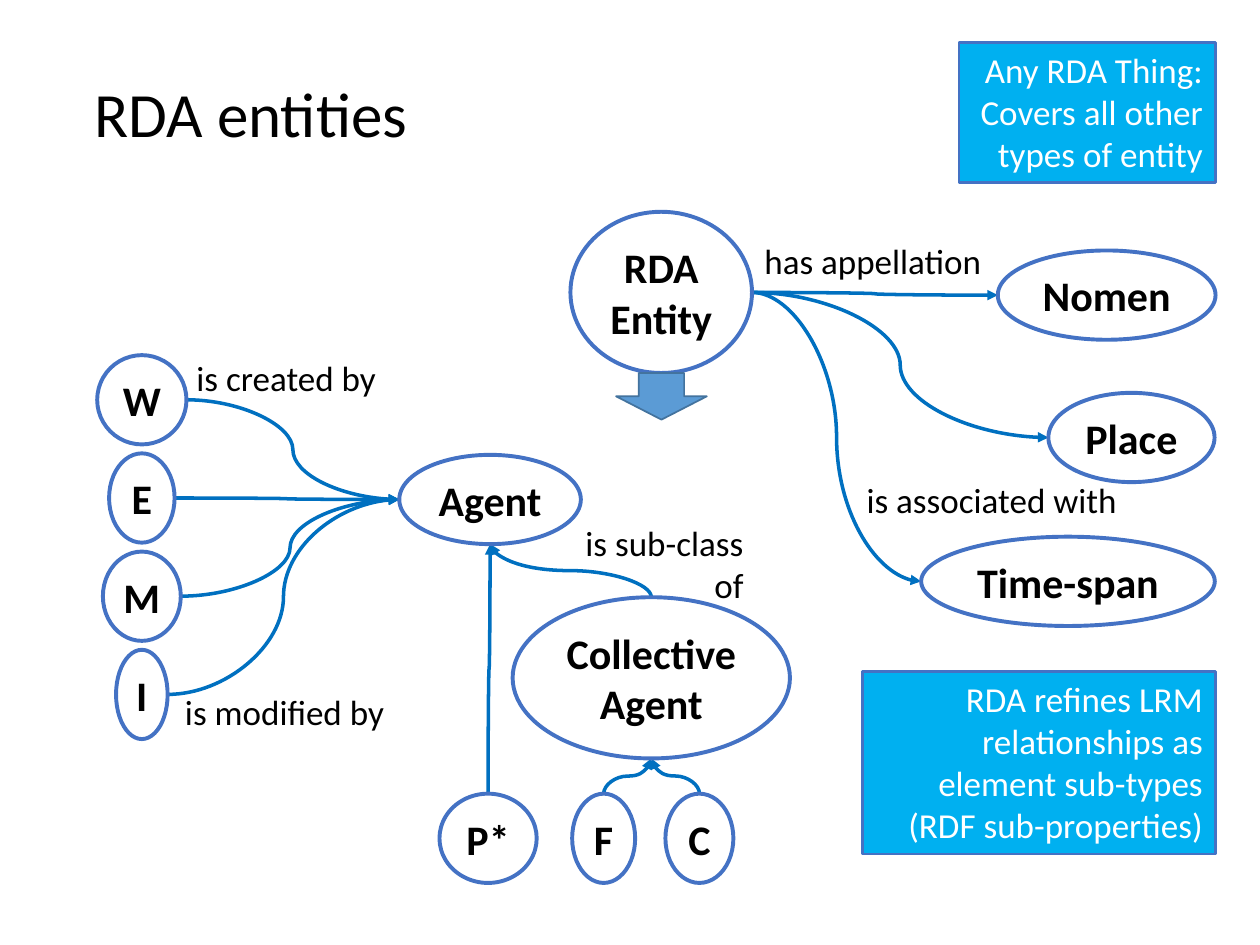
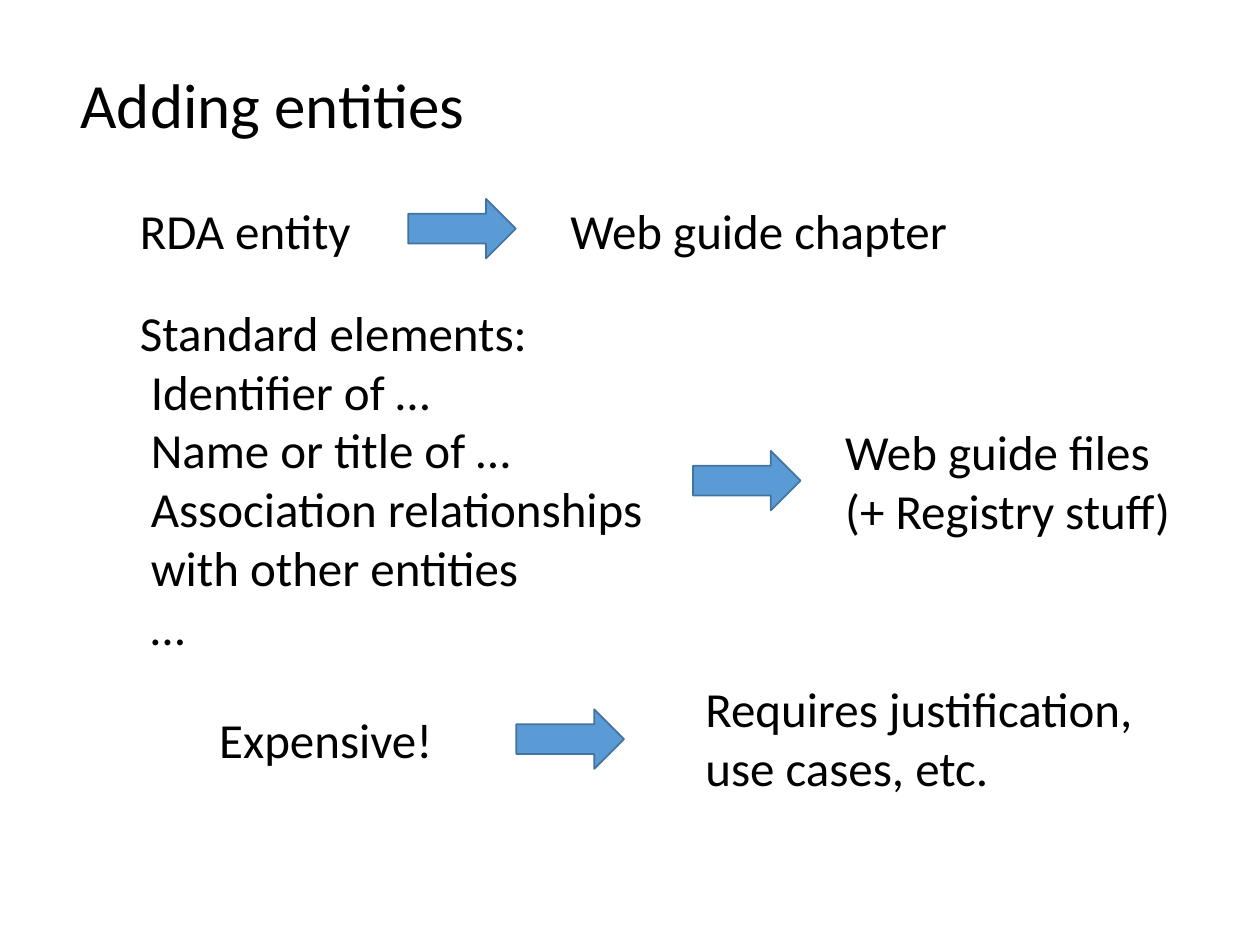
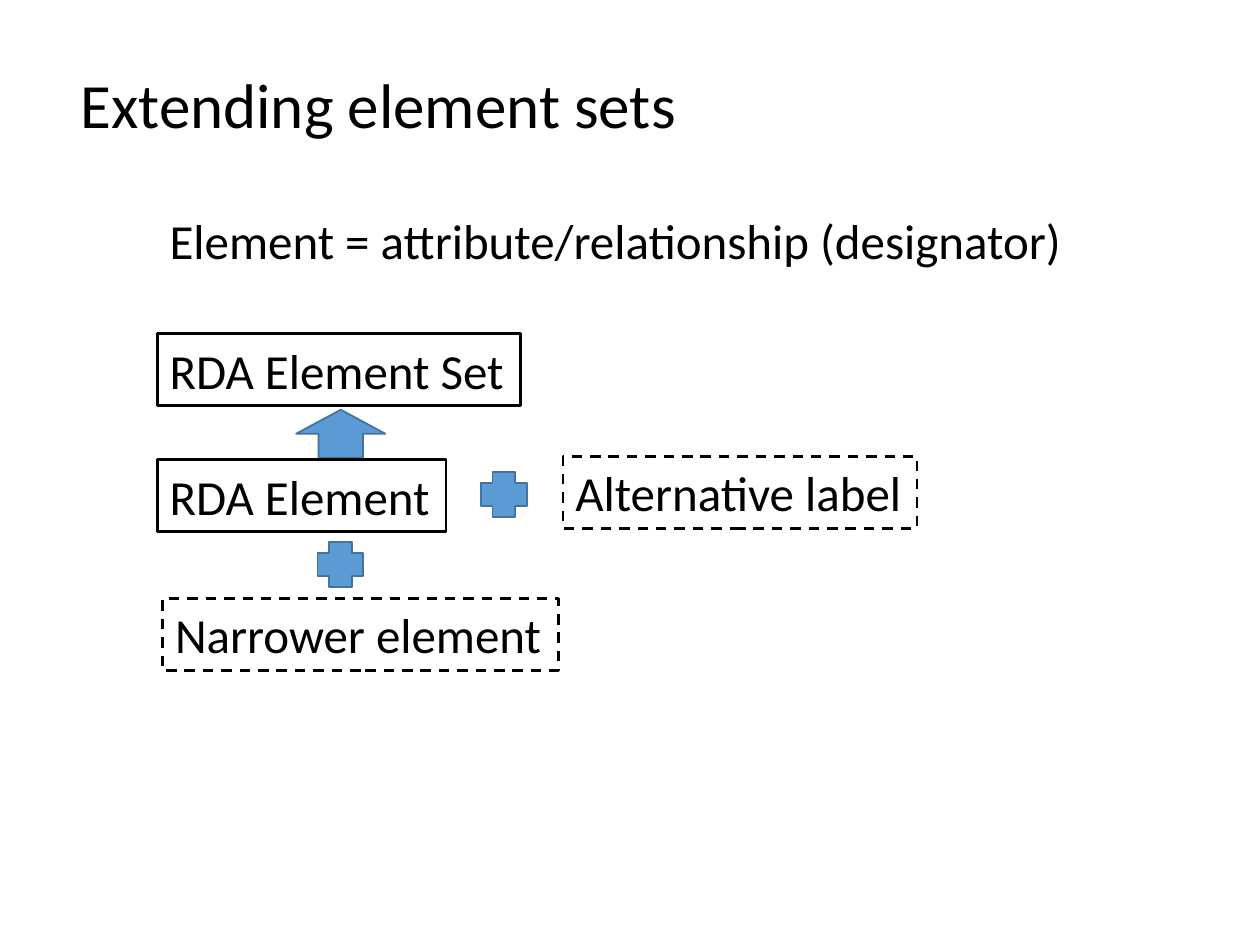
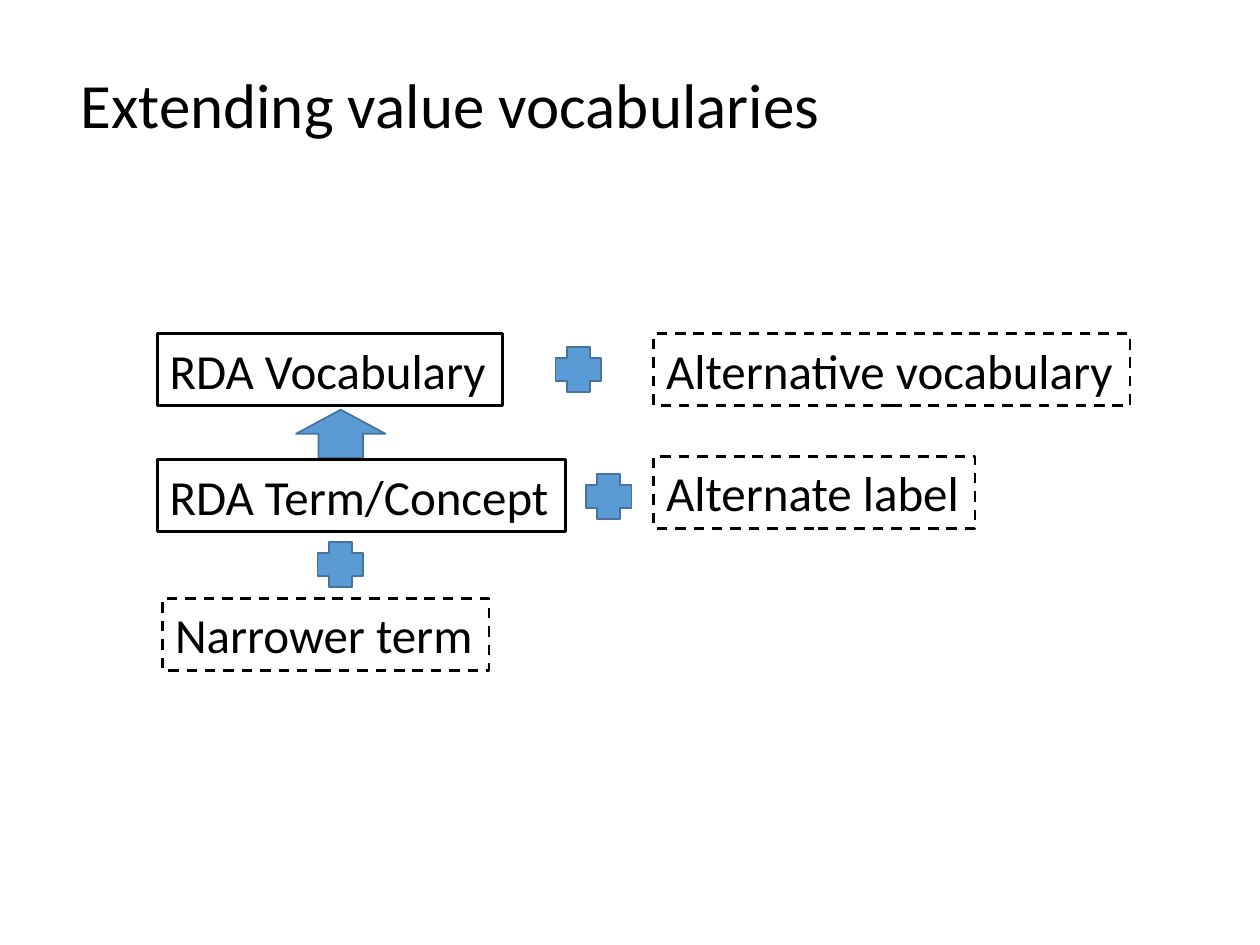
"""Build four slides on RDA entities, elements and vocabularies."""
from dataclasses import dataclass

from lxml import etree
from pptx import Presentation
from pptx.dml.color import RGBColor
from pptx.enum.dml import MSO_LINE
from pptx.enum.shapes import MSO_CONNECTOR, MSO_SHAPE
from pptx.enum.text import MSO_ANCHOR, MSO_AUTO_SIZE, PP_ALIGN
from pptx.oxml.ns import qn
from pptx.util import Cm, Pt

LEFT, CENTER, RIGHT = PP_ALIGN.LEFT, PP_ALIGN.CENTER, PP_ALIGN.RIGHT
TOP, MIDDLE = MSO_ANCHOR.TOP, MSO_ANCHOR.MIDDLE
GROW, FIXED = MSO_AUTO_SIZE.SHAPE_TO_FIT_TEXT, MSO_AUTO_SIZE.NONE
RECTANGLE, OVAL, PLUS = MSO_SHAPE.RECTANGLE, MSO_SHAPE.OVAL, MSO_SHAPE.CROSS
UP_ARROW, DOWN_ARROW = MSO_SHAPE.UP_ARROW, MSO_SHAPE.DOWN_ARROW
RIGHT_ARROW = MSO_SHAPE.RIGHT_ARROW
CURVE, DASH = MSO_CONNECTOR.CURVE, MSO_LINE.DASH
TITLE_ONLY = 5
OVAL_SITES = {"top": 0, "left": 2, "bottom": 4, "right": 6}


@dataclass(frozen=True)
class Theme:
    """Colours, font and sizes shared by the slides."""

    font: str = "Calibri"
    black: RGBColor = RGBColor(0, 0, 0)
    white: RGBColor = RGBColor(255, 255, 255)
    note_fill: RGBColor = RGBColor(0x00, 0xB0, 0xF0)
    outline: RGBColor = RGBColor(0x44, 0x72, 0xC4)
    relation: RGBColor = RGBColor(0x00, 0x70, 0xC0)
    symbol_fill: RGBColor = RGBColor(0x5B, 0x9B, 0xD5)
    symbol_line: RGBColor = RGBColor(0x43, 0x73, 0x9E)
    title_size: int = 36
    body_size: int = 28
    node_size: int = 24
    label_size: int = 20


THEME = Theme()

NODES = [
    ("RDA\nEntity", 13.33, 4.27, 3.66, 3.25),
    ("Nomen", 22.31, 5.05, 4.39, 1.8),
    ("Place", 22.81, 7.92, 3.35, 1.8),
    ("Time-span", 21.53, 10.82, 5.92, 1.8),
    ("Agent", 9.88, 9.17, 3.66, 1.8),
    ("Collective\nAgent", 13.13, 12.04, 5.59, 3.25),
    ("P*", 9.84, 16, 1.96, 1.8),
    ("F", 12.17, 16, 1.27, 1.8),
    ("C", 14.1, 16, 1.37, 1.8),
]
RESOURCE_WIDTHS = {"W": 1.8, "E": 1.32, "M": 1.57, "I": 1.04}
SIDEWAYS_RELATIONS = [("RDA\nEntity", name) for name in ("Nomen", "Place", "Time-span")]
SIDEWAYS_RELATIONS += [(name, "Agent") for name in RESOURCE_WIDTHS]
UPWARD_RELATIONS = [
    ("F", "Collective\nAgent"),
    ("C", "Collective\nAgent"),
    ("P*", "Agent"),
    ("Collective\nAgent", "Agent"),
]


def write_text(shape, text, size=THEME.body_size, color=THEME.black, bold=False,
               align=LEFT, anchor=TOP, wrap=False, auto_size=GROW, indent=0):
    """Fill a shape with one paragraph per line, indenting all but the first."""
    frame = shape.text_frame
    frame.text = text
    frame.word_wrap = wrap
    frame.auto_size = auto_size
    frame.vertical_anchor = anchor
    for number, paragraph in enumerate(frame.paragraphs):
        paragraph.alignment = align
        if indent and number:
            paragraph._p.get_or_add_pPr().set("marL", str(Cm(indent)))
        font = paragraph.font
        font.name, font.size, font.bold = THEME.font, Pt(size), bold
        font.color.rgb = color


def add_titled_slide(presentation, title, left=1.37, top=1.19, width=14):
    """Add a title-only slide and place its title."""
    slide = presentation.slides.add_slide(presentation.slide_layouts[TITLE_ONLY])
    placeholder = slide.shapes.title
    placeholder.left, placeholder.top = Cm(left), Cm(top)
    placeholder.width, placeholder.height = Cm(width), Cm(1.8)
    write_text(placeholder, title, size=THEME.title_size, wrap=True)
    return slide


def add_text(slide, text, left, top, width, height, **text_format):
    """Add a plain text box."""
    box = slide.shapes.add_textbox(Cm(left), Cm(top), Cm(width), Cm(height))
    write_text(box, text, **text_format)


def add_figure(slide, kind, left, top, width, height, fill=None,
               line=THEME.black, weight=1.5, dash=None):
    """Add a preset shape with an outline and an optional fill."""
    shape = slide.shapes.add_shape(kind, Cm(left), Cm(top), Cm(width), Cm(height))
    shape.shadow.inherit = False
    if fill is None:
        shape.fill.background()
    else:
        shape.fill.solid()
        shape.fill.fore_color.rgb = fill
    shape.line.color.rgb = line
    shape.line.width = Pt(weight)
    if dash is not None:
        shape.line.dash_style = dash
    return shape


def add_symbol(slide, kind, left, top, width, height):
    """Add a block arrow or plus sign."""
    add_figure(slide, kind, left, top, width, height, fill=THEME.symbol_fill,
               line=THEME.symbol_line, weight=1)


def add_plus(slide, left, top):
    """Add a plus sign."""
    add_symbol(slide, PLUS, left, top, 0.92, 0.92)


def add_right_arrow(slide, left, top):
    """Add a block arrow that points right."""
    add_symbol(slide, RIGHT_ARROW, left, top, 2.17, 1.2)


def add_note(slide, text, left, top, width, height):
    """Add a filled note with right-aligned text."""
    note = add_figure(slide, RECTANGLE, left, top, width, height,
                      fill=THEME.note_fill, line=THEME.outline)
    write_text(note, text, size=THEME.label_size, color=THEME.white,
               align=RIGHT, wrap=True)


def add_box(slide, text, left, top, width, dash=None):
    """Add an outlined box for an element or term."""
    box = add_figure(slide, RECTANGLE, left, top, width, 1.45, dash=dash)
    write_text(box, text)


def add_node(slide, text, center, top, width, height):
    """Add an entity oval centred on a horizontal position."""
    node = add_figure(slide, OVAL, center - width / 2, top, width, height,
                      line=THEME.outline, weight=2.25)
    write_text(node, text, size=THEME.node_size, bold=True, align=CENTER,
               anchor=MIDDLE, auto_size=FIXED)
    return node


def add_relation(slide, source, target, upward=False):
    """Glue a curved arrow between two ovals, behind them."""
    if upward:
        begin_x, end_x = (node.left + node.width // 2 for node in (source, target))
        begin_y, end_y = source.top, target.top + target.height
        middle_x, middle_y = (begin_x + end_x) // 2, (begin_y + end_y) // 2
        half_run, half_rise = (begin_y - end_y) // 2, (end_x - begin_x) // 2
        ends = (middle_x - half_run, middle_y - half_rise,
                middle_x + half_run, middle_y + half_rise)
        sides = ("top", "bottom")
    else:
        ends = (source.left + source.width, source.top + source.height // 2,
                target.left, target.top + target.height // 2)
        sides = ("right", "left")
    connector = slide.shapes.add_connector(CURVE, *ends)
    connector.line.color.rgb = THEME.relation
    connector.line.width = Pt(2)
    element = connector._element
    if upward:
        element.spPr.find(qn("a:xfrm")).set("rot", str(270 * 60000))
    etree.SubElement(element.spPr.find(qn("a:ln")), qn("a:tailEnd"), type="triangle")
    etree.SubElement(element.spPr, qn("a:effectLst"))
    glue = element.find(".//" + qn("p:cNvCxnSpPr"))
    for tag, node, side in zip(("a:stCxn", "a:endCxn"), (source, target), sides):
        etree.SubElement(glue, qn(tag), id=str(node.shape_id), idx=str(OVAL_SITES[side]))
    slide.shapes._spTree.insert(2, element)


def build_entities(presentation):
    """Show the RDA entities and their relationships."""
    slide = add_titled_slide(presentation, "RDA entities", left=1.65, top=1.37)
    resources = [(name, 2.86, 7.16 + 1.98 * row, width, 1.8)
                 for row, (name, width) in enumerate(RESOURCE_WIDTHS.items())]
    nodes = {node[0]: add_node(slide, *node) for node in resources + NODES}
    for source, target in SIDEWAYS_RELATIONS:
        add_relation(slide, nodes[source], nodes[target])
    for source, target in UPWARD_RELATIONS:
        add_relation(slide, nodes[source], nodes[target], upward=True)
    for text, left, top, width in [
        ("has appellation", 15.16, 4.7, 4.93),
        ("is created by", 3.71, 7.06, 4.17),
        ("is associated with", 17.22, 9.52, 5.61),
        ("is modified by", 3.48, 13.79, 4.57),
    ]:
        add_text(slide, text, left, top, width, 1.11, size=THEME.label_size)
    add_text(slide, "is sub-class\nof", 11.51, 10.39, 3.73, 1.96,
             size=THEME.label_size, align=RIGHT)
    add_symbol(slide, DOWN_ARROW, 12.42, 7.52, 1.83, 0.94)
    add_note(slide, "Any RDA Thing:\nCovers all other types of entity",
             19.33, 0.86, 5.17, 2.82)
    add_note(slide, "RDA refines LRM relationships as element sub-types "
             "(RDF sub-properties)", 17.39, 13.54, 7.11, 3.68)


def build_adding(presentation):
    """Show what adding an entity leads to."""
    slide = add_titled_slide(presentation, "Adding entities")
    add_text(slide, "RDA entity", 2.57, 3.91, 4.83, 1.45)
    add_right_arrow(slide, 8.23, 4.01)
    add_text(slide, "Web guide chapter", 11.25, 3.91, 8.48, 1.45)
    add_text(slide, "Standard elements:\nIdentifier of …\nName or title of …\n"
             "Association relationships\nwith other entities\n…",
             2.57, 5.97, 10.77, 7.44, indent=0.22)
    add_right_arrow(slide, 13.97, 9.09)
    add_text(slide, "Web guide files\n(+ Registry stuff)", 16.79, 8.38, 7.16, 2.64)
    add_text(slide, "Expensive!", 4.17, 14.17, 4.85, 1.45)
    add_right_arrow(slide, 10.41, 14.3)
    add_text(slide, "Requires justification,\nuse cases, etc.", 13.97, 13.56, 9.25, 2.64)


def build_extension(presentation, title, whole, part, narrower, alternative):
    """Show a set, its member and the additions to the member."""
    slide = add_titled_slide(presentation, title, width=18)
    add_box(slide, whole[0], 3.17, 6.73, whole[1])
    add_symbol(slide, UP_ARROW, 5.97, 8.26, 1.8, 0.97)
    add_box(slide, part[0], 3.17, 9.27, part[1])
    add_plus(slide, 6.4, 10.92)
    add_box(slide, narrower[0], 3.28, 12.07, narrower[1], dash=DASH)
    text, left, width = alternative
    add_box(slide, text, left, 9.2, width, dash=DASH)
    return slide


def main():
    """Build and save the presentation."""
    presentation = Presentation()
    presentation.slide_width, presentation.slide_height = Cm(25.4), Cm(19.05)
    build_entities(presentation)
    build_adding(presentation)

    elements = build_extension(
        presentation, "Extending element sets", ("RDA Element Set", 7.32),
        ("RDA Element", 5.82), ("Narrower element", 7.98),
        ("Alternative label", 11.35, 7.14))
    add_plus(elements, 9.7, 9.51)
    add_text(elements, "Element = attribute/relationship (designator)",
             3.17, 4.11, 18.69, 1.45)

    vocabularies = build_extension(
        presentation, "Extending value vocabularies", ("RDA Vocabulary", 6.96),
        ("RDA Term/Concept", 8.23), ("Narrower term", 6.58),
        ("Alternate label", 13.18, 6.48))
    add_plus(vocabularies, 11.81, 9.55)
    add_plus(vocabularies, 11.2, 6.99)
    add_box(vocabularies, "Alternative vocabulary", 13.18, 6.73, 9.6, dash=DASH)
    presentation.save("out.pptx")


if __name__ == "__main__":
    main()
